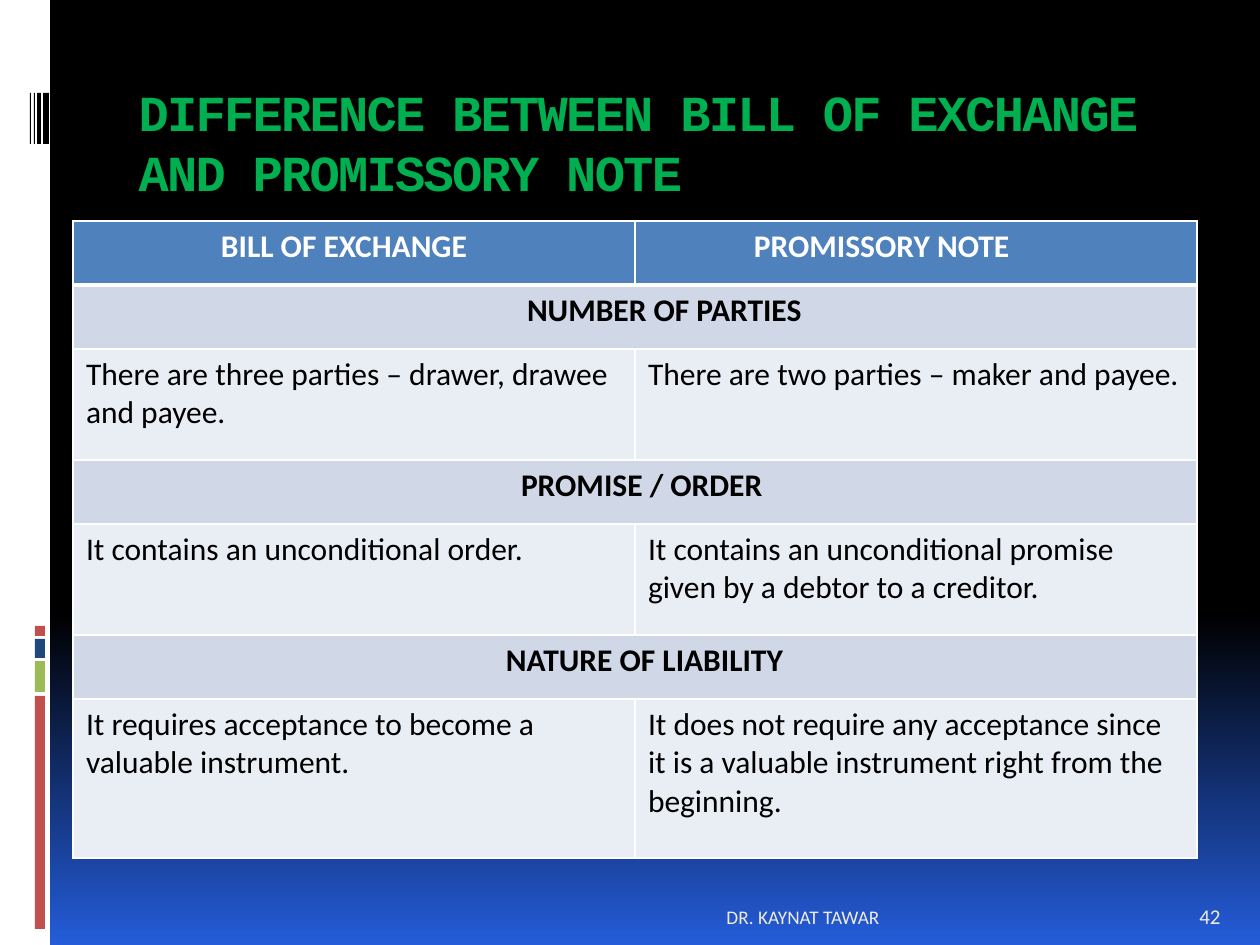
from lxml.etree import SubElement
from pptx import Presentation
from pptx.dml.color import RGBColor
from pptx.enum.shapes import MSO_SHAPE
from pptx.enum.text import MSO_ANCHOR, PP_ALIGN
from pptx.oxml.ns import qn
from pptx.util import Emu, Pt

PX_PER_INCH = 126
WHITE = RGBColor(0xFF, 0xFF, 0xFF)
BLACK = RGBColor(0x00, 0x00, 0x00)
BLUE = RGBColor(0x24, 0x5C, 0xD9)
GREEN = RGBColor(0x00, 0xB0, 0x50)
RED_BAR = RGBColor(0xC0, 0x50, 0x4D)
GREEN_BAR = RGBColor(0x9B, 0xBB, 0x59)
NAVY_BAR = RGBColor(0x1F, 0x49, 0x7D)
HEADER_FILL = RGBColor(0x4F, 0x81, 0xBD)
SECTION_FILL = RGBColor(0xD0, 0xD8, 0xE8)
BODY_FILL = RGBColor(0xE9, 0xED, 0xF4)
FOOTER_COLOR = RGBColor(0xEE, 0xEC, 0xE1)

TITLE_FORMAT = {"name": "Courier New", "size": Pt(28.8), "bold": True}
HEADING_FORMAT = {"name": "Calibri", "size": Pt(18), "bold": True}
BODY_FORMAT = {"name": "Calibri", "size": Pt(18), "bold": False}

# Left, top, width, height, colour
SIDE_BARS = [
    (0, 0, 50, 945, WHITE),
    (35, 696, 10, 233, RED_BAR),
    (35, 661, 10, 31, GREEN_BAR),
    (35, 639, 10, 19, NAVY_BAR),
    (35, 626, 10, 10, RED_BAR),
    (43, 93, 6, 51, BLACK),
    (37, 93, 4, 51, BLACK),
    (34, 93, 1, 51, BLACK),
    (30, 93, 1, 51, BLACK),
]

# Each heading comes with its indent from the left edge of its cell
HEADER = [("BILL OF EXCHANGE", 148), ("PROMISSORY NOTE", 119)]
SECTIONS = [
    ("NUMBER OF PARTIES", 454, 111,
     "There are three parties – drawer, drawee and payee.",
     "There are two parties – maker and payee."),
    ("PROMISE / ORDER", 448, 111,
     "It contains an unconditional order.",
     "It contains an unconditional promise given by a debtor to a creditor."),
    ("NATURE OF LIABILITY", 433, 159,
     "It requires acceptance to become a valuable instrument.",
     "It does not require any acceptance since it is a valuable instrument "
     "right from the beginning."),
]
HEADING_HEIGHT = 64
CELL_INDENT = 13


def px(length):
    return Emu(round(length * 914400 / PX_PER_INCH))


def write(frame, text, color, format_values):
    para = frame.paragraphs[0]
    span = para.add_run()
    span.text = text
    for name, value in format_values.items():
        setattr(span.font, name, value)
    span.font.color.rgb = color
    return para, span


def paint_background(page):
    fill = page.background.fill
    fill.gradient()
    fill.gradient_angle = 270
    for stop, position, color in zip(fill.gradient_stops, (0.65, 1), (BLACK, BLUE)):
        stop.position = position
        stop.color.rgb = color


def add_bar(page, left, top, width, height, color):
    bar = page.shapes.add_shape(
        MSO_SHAPE.RECTANGLE, px(left), px(top), px(width), px(height))
    bar.shadow.inherit = False
    bar.fill.solid()
    bar.fill.fore_color.rgb = color
    bar.line.fill.background()


def set_title(page, text):
    title = page.shapes.title
    place = {"left": 126, "top": 71, "width": 1071, "height": 126}
    for name, value in place.items():
        setattr(title, name, px(value))
    frame = title.text_frame
    frame.word_wrap = True
    frame.vertical_anchor = MSO_ANCHOR.TOP
    frame.margin_top = px(11)
    para, span = write(frame, text, GREEN, TITLE_FORMAT)
    para.alignment = PP_ALIGN.LEFT
    para.line_spacing = Pt(34.3)
    span.font._element.set("spc", "-100")


def style_cell(cell, fill, bottom_width=1):
    cell.fill.solid()
    cell.fill.fore_color.rgb = fill
    properties = cell._tc.get_or_add_tcPr()
    widths = {"a:lnL": 1, "a:lnR": 1, "a:lnT": 1, "a:lnB": bottom_width}
    for position, (tag, width) in enumerate(widths.items()):
        line = SubElement(properties, qn(tag), w=str(Pt(width)))
        solid = SubElement(line, qn("a:solidFill"))
        SubElement(solid, qn("a:srgbClr"), val=str(WHITE))
        properties.insert(position, line)  # borders come before the fill


def fill_cell(cell, text, color, format_values, indent=CELL_INDENT):
    cell.margin_left = px(indent)
    write(cell.text_frame, text, color, format_values)


def add_comparison(page):
    heights = [HEADING_HEIGHT]
    for section in SECTIONS:
        heights += [HEADING_HEIGHT, section[2]]
    table = page.shapes.add_table(
        len(heights), 2, px(73), px(221), px(1124), px(sum(heights))).table
    for row, height in zip(table.rows, heights):
        row.height = px(height)

    # Column headings
    for column, (text, indent) in enumerate(HEADER):
        cell = table.cell(0, column)
        fill_cell(cell, text, WHITE, HEADING_FORMAT, indent)
        style_cell(cell, HEADER_FILL, bottom_width=3)

    # A merged heading and a pair of answers for each section
    for index, (heading, indent, _, *answers) in enumerate(SECTIONS):
        row = 1 + 2 * index
        table.cell(row, 0).merge(table.cell(row, 1))
        fill_cell(table.cell(row, 0), heading, BLACK, HEADING_FORMAT, indent)
        for column, answer in enumerate(answers):
            style_cell(table.cell(row, column), SECTION_FILL)
            cell = table.cell(row + 1, column)
            fill_cell(cell, answer, BLACK, BODY_FORMAT)
            style_cell(cell, BODY_FILL)


def add_footer(page, text, left, width, size, alignment):
    box = page.shapes.add_textbox(px(left), px(885), px(width), px(50))
    frame = box.text_frame
    frame.word_wrap = True
    frame.vertical_anchor = MSO_ANCHOR.BOTTOM
    para, _ = write(frame, text, FOOTER_COLOR, {"name": "Calibri", "size": Pt(size)})
    para.alignment = alignment


def main():
    deck = Presentation()
    deck.slide_width, deck.slide_height = px(1260), px(945)
    page = deck.slides.add_slide(deck.slide_layouts[5])
    paint_background(page)
    for bar in SIDE_BARS:
        add_bar(page, *bar)
    set_title(page, "DIFFERENCE BETWEEN BILL OF EXCHANGE AND PROMISSORY NOTE")
    add_comparison(page)
    add_footer(page, "42", 1187, 63, 12, PP_ALIGN.LEFT)
    add_footer(page, "DR. KAYNAT TAWAR", 126, 766, 11, PP_ALIGN.RIGHT)
    deck.save("out.pptx")


if __name__ == "__main__":
    main()
